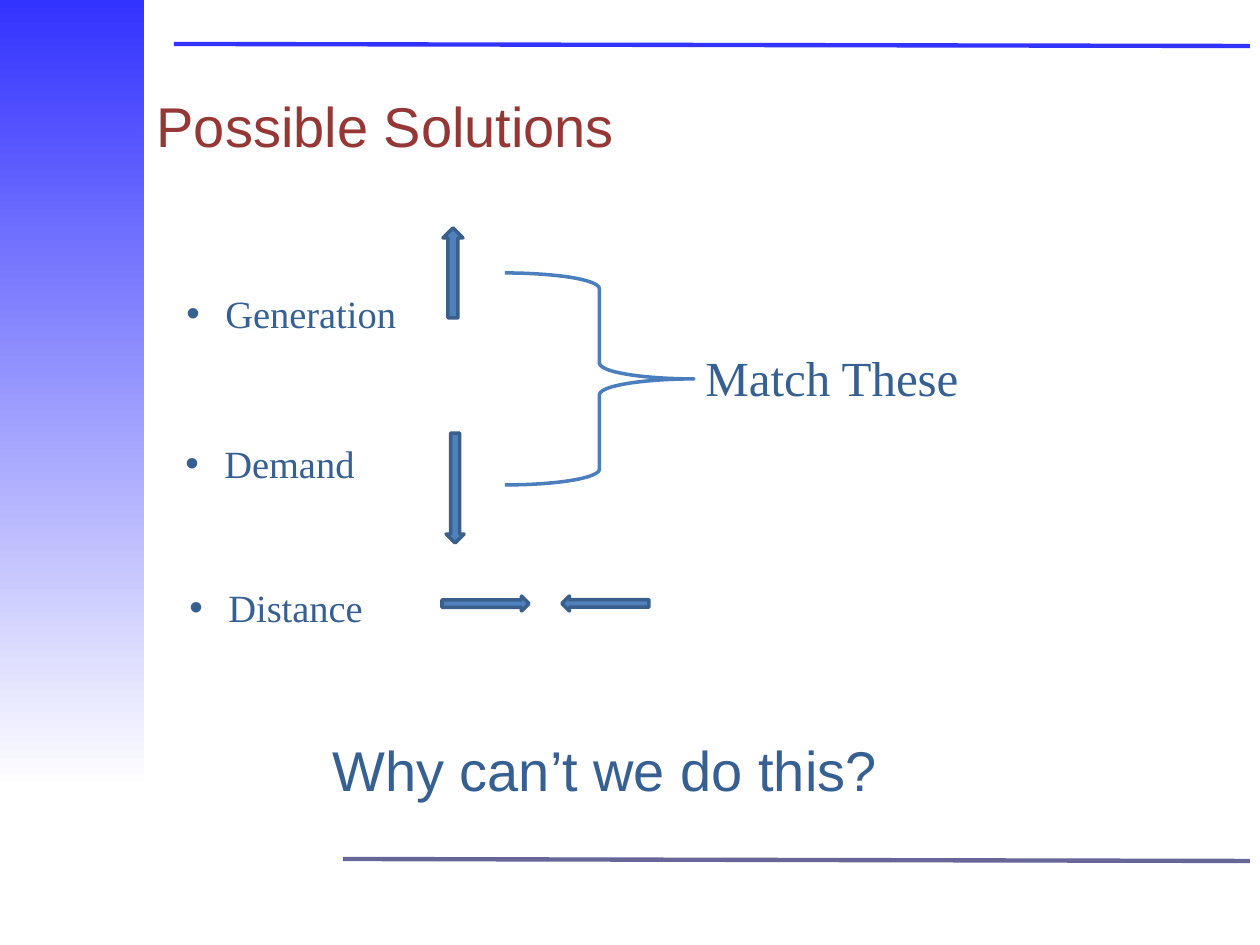
import lxml.etree
import pptx
import pptx.dml.color
import pptx.enum.shapes
import pptx.enum.text
import pptx.oxml.ns
import pptx.util

PX = 914400 / 126
THEME = {
    "bright": "3333FF", "white": "FFFFFF", "rule": "666699",
    "title": "953735", "text": "376092",
    "arrow": "4F81BD", "arrow_edge": "3A5F8C", "brace": "4B7EBC",
    "sans": "Arial", "serif": "Times New Roman",
    "heading_size": 32, "note_size": 28, "item_size": 22,
    "rule_width": 2.5, "edge_width": 2,
}
SHAPE = pptx.enum.shapes.MSO_SHAPE
ALIGN = pptx.enum.text.PP_ALIGN
ANCHOR = pptx.enum.text.MSO_ANCHOR
qn = pptx.oxml.ns.qn


def px(*lengths):
    """Turn pixel lengths into EMU."""
    return [pptx.util.Emu(round(length * PX)) for length in lengths]


def write(holder, text, *, font, size, color="text", align=ALIGN.LEFT,
          anchor=ANCHOR.TOP, bullet=False):
    frame = holder.text_frame
    frame.word_wrap = True
    frame.vertical_anchor = anchor
    paragraph = frame.paragraphs[0]
    paragraph.text = text
    paragraph.alignment = align
    if bullet:
        properties = paragraph._p.get_or_add_pPr()
        indent = px(39)[0]
        properties.set("marL", str(indent))
        properties.set("indent", str(-indent))
        bullet_font = lxml.etree.SubElement(properties, qn("a:buFont"))
        bullet_font.set("typeface", THEME["sans"])
        lxml.etree.SubElement(properties, qn("a:buChar")).set("char", "•")
    run_font = paragraph.runs[0].font
    run_font.name = THEME[font]
    run_font.size = pptx.util.Pt(THEME[size])
    run_font.color.rgb = pptx.dml.color.RGBColor.from_string(THEME[color])


presentation = pptx.Presentation()
presentation.slide_width, presentation.slide_height = px(1260, 945)
slide = presentation.slides.add_slide(presentation.slide_layouts[5])
shapes = slide.shapes

# Side band and rules
band = shapes.add_shape(SHAPE.RECTANGLE, *px(0, 0, 144, 790))
band.shadow.inherit = False
band.line.fill.background()
band.fill.gradient()
band.fill.gradient_angle = 270
for stop, position, color in zip(band.fill.gradient_stops, (0, 1), ("bright", "white")):
    stop.position = position
    stop.color.rgb = pptx.dml.color.RGBColor.from_string(THEME[color])

for left, top, color in ((174, 44, "bright"), (343, 859, "rule")):
    rule = shapes.add_connector(
        pptx.enum.shapes.MSO_CONNECTOR.STRAIGHT, *px(left, top, 1250, top + 2))
    rule.line.color.rgb = pptx.dml.color.RGBColor.from_string(THEME[color])
    rule.line.width = pptx.util.Pt(THEME["rule_width"])
    lxml.etree.SubElement(rule._element.spPr, qn("a:effectLst"))

# Title
title = shapes.title
title.left, title.top, title.width, title.height = px(144, 55, 1116, 140)
write(title, "Possible Solutions", font="sans", size="heading_size",
      color="title", anchor=ANCHOR.MIDDLE)

# Trend arrows and the brace over generation and demand
for preset, bounds, rotation in (
    (SHAPE.UP_ARROW, (443, 228, 20, 90), 0),
    (SHAPE.UP_ARROW, (446, 433, 18, 110), 180),
    (SHAPE.LEFT_ARROW, (562, 596, 87, 15), 0),
    (SHAPE.LEFT_ARROW, (442, 596, 87, 15), 180),
    (SHAPE.RIGHT_BRACE, (505, 273, 189, 212), 0),
):
    mark = shapes.add_shape(preset, *px(*bounds))
    mark.rotation = rotation
    mark.shadow.inherit = False
    edge = "arrow_edge"
    if preset == SHAPE.RIGHT_BRACE:
        edge = "brace"
        mark.fill.background()
    else:
        mark.fill.solid()
        mark.fill.fore_color.rgb = pptx.dml.color.RGBColor.from_string(THEME["arrow"])
    mark.line.color.rgb = pptx.dml.color.RGBColor.from_string(THEME[edge])
    mark.line.width = pptx.util.Pt(THEME["edge_width"])

# Closing question, brace label and items
question = shapes.add_textbox(*px(38, 690, 1134, 158))
write(question, "Why can’t we do this?", font="sans", size="heading_size",
      align=ALIGN.CENTER, anchor=ANCHOR.MIDDLE)

match_label = shapes.add_textbox(*px(693, 341, 318, 72))
write(match_label, "Match These", font="serif", size="note_size")

for text, left, top, width in (
    ("Generation", 174, 284, 249),
    ("Demand", 173, 434, 214),
    ("Distance", 177, 578, 210),
):
    item = shapes.add_textbox(*px(left, top, width, 59))
    write(item, text, font="serif", size="item_size", bullet=True)

presentation.save("out.pptx")
